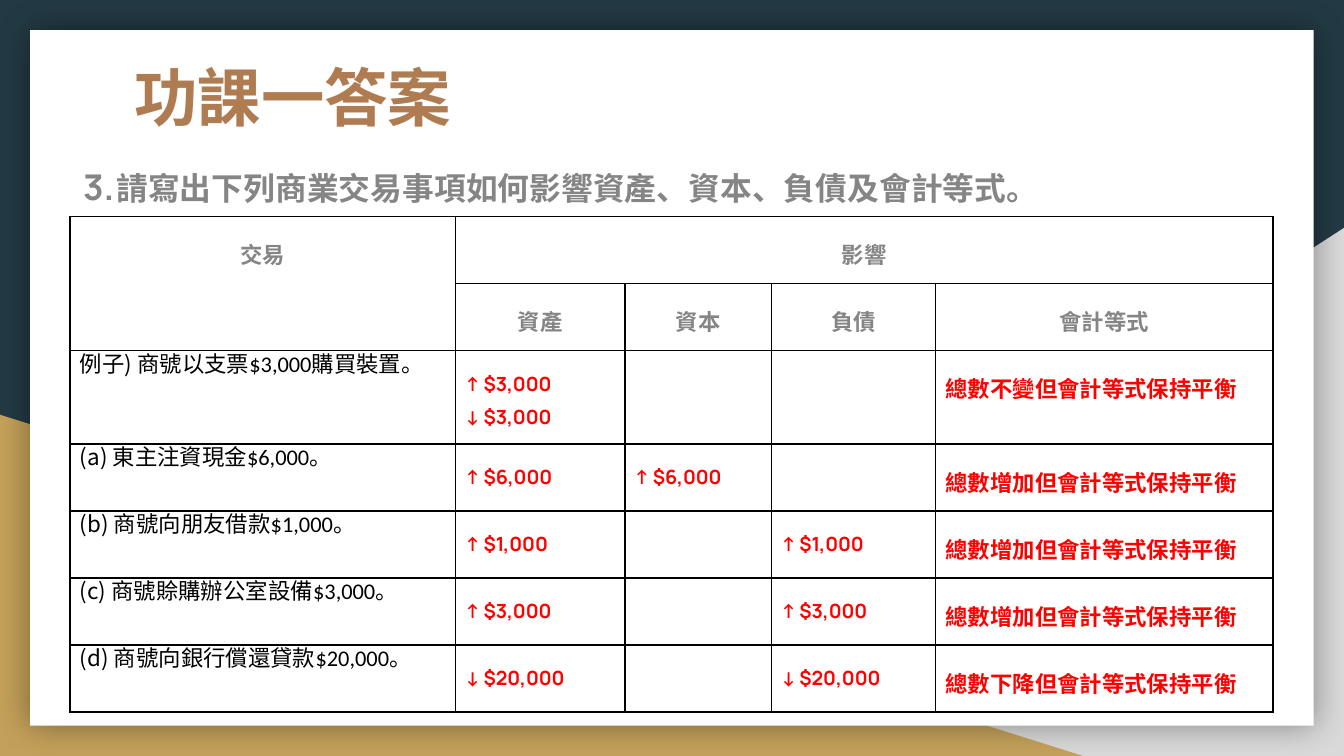
from lxml.etree import SubElement, fromstring
from pptx import Presentation
from pptx.dml.color import RGBColor
from pptx.enum.shapes import MSO_SHAPE
from pptx.enum.text import MSO_ANCHOR, MSO_AUTO_SIZE, PP_ALIGN
from pptx.oxml.ns import nsdecls, qn
from pptx.util import Cm, Pt

CJK = "Noto Sans CJK TC"
HEADING = {"name": "Manrope", "size": Pt(12), "bold": True, "color": "858585"}
ANSWER = {**HEADING, "color": "FF0000"}
AMOUNT = {**ANSWER, "size": Pt(10.5)}
EVENT = {"name": "Calibri", "size": Pt(12), "bold": False, "color": "000000"}
LABEL = {**EVENT, "name": CJK}

COLUMNS = [7.29, 3.2, 2.77, 3.1, 6.38]
ROWS = [1.22, 1.22, 1.73] + [1.22] * 4
EFFECTS = ["資產", "資本", "負債", "會計等式"]
TRANSACTIONS = [
    ([("例子", EVENT), (") ", LABEL), ("商號以支票$3,000購買裝置。", EVENT)],
     ["↑ $3,000", "↓ $3,000"], [], [], "不變"),
    ([("(a) ", LABEL), ("東主注資現金$6,000。", EVENT)],
     ["↑ $6,000"], ["↑ $6,000"], [], "增加"),
    ([("(b) ", LABEL), ("商號向朋友借款$1,000。", EVENT)],
     ["↑ $1,000"], [], ["↑ $1,000"], "增加"),
    ([("(c) ", LABEL), ("商號賒購辦公室設備$3,000。", EVENT)],
     ["↑ $3,000"], [], ["↑ $3,000"], "增加"),
    ([("(d) ", LABEL), ("商號向銀行償還貸款$20,000。", EVENT)],
     ["↓ $20,000"], [], ["↓ $20,000"], "下降"),
]


def rgb(value):
    return RGBColor.from_string(value)


def apply(target, **formats):
    for name, value in formats.items():
        setattr(target, name, value)


def place(shape, box):
    apply(shape, **dict(zip(("left", "top", "width", "height"), map(Cm, box))))


def margins(target, left, top, right, bottom):
    apply(target, margin_left=Cm(left), margin_top=Cm(top),
          margin_right=Cm(right), margin_bottom=Cm(bottom))


def write(paragraph, runs, **formats):
    apply(paragraph, **formats)
    for text, style in runs:
        run = paragraph.add_run()
        run.text = text
        apply(run.font, **{k: v for k, v in style.items() if k != "color"})
        run.font.color.rgb = rgb(style["color"])
        SubElement(run.font._element, qn("a:ea")).set("typeface", CJK)


def add_backdrop(slide, width, height):
    slide.background.fill.solid()
    slide.background.fill.fore_color.rgb = rgb("233A44")
    pieces = [
        (MSO_SHAPE.RIGHT_TRIANGLE, (9.96, height - 9.98, width - 9.96, 9.98), "D9D9D9"),
        (MSO_SHAPE.RIGHT_TRIANGLE, (0, height - 6.45, 20.47, 6.45), "C4A15A"),
        (MSO_SHAPE.RECTANGLE, (0.57, 0.57, width - 1.14, height - 1.14), "FFFFFF"),
    ]
    grey, gold, card = [add_piece(slide, *piece) for piece in pieces]
    grey.element.spPr.xfrm.set("flipH", "1")
    card.element.spPr.find(qn("a:effectLst")).append(fromstring(
        f'<a:outerShdw {nsdecls("a")} blurRad="{Pt(18)}" dist="0" dir="0">'
        '<a:srgbClr val="000000"><a:alpha val="40000"/></a:srgbClr></a:outerShdw>'))


def add_piece(slide, kind, box, color):
    piece = slide.shapes.add_shape(kind, *map(Cm, box))
    piece.shadow.inherit = False
    piece.fill.solid()
    piece.fill.fore_color.rgb = rgb(color)
    piece.line.fill.background()
    return piece


def add_question(slide, box):
    frame = slide.shapes.add_textbox(*map(Cm, box)).text_frame
    apply(frame, word_wrap=True, vertical_anchor=MSO_ANCHOR.MIDDLE)
    margins(frame, 0.25, 0, 0.25, 0.81)
    question = frame.paragraphs[0]
    write(question, [
        ("3.", {**HEADING, "size": Pt(19)}),
        ("\t", HEADING),
        ("請寫出下列商業交易事項如何影響資產、資本、負債及會計等式。",
         {**HEADING, "size": Pt(17)}),
    ], line_spacing=1.25)
    hanging = question._p.get_or_add_pPr()
    hanging.set("marL", str(Cm(0.63)))
    hanging.set("indent", str(-Cm(0.63)))


def add_title(slide, box):
    title = slide.shapes.title
    place(title, box)
    title.element.getparent().append(title.element)
    frame = title.text_frame
    apply(frame, word_wrap=True, auto_size=MSO_AUTO_SIZE.NONE,
          vertical_anchor=MSO_ANCHOR.TOP)
    margins(frame, *[0.25] * 4)
    write(frame.paragraphs[0],
          [("功課一答案", {**HEADING, "size": Pt(34), "color": "AF7B51"})],
          alignment=PP_ALIGN.LEFT)


def frame_cell(cell):
    cell.fill.background()
    properties = cell._tc.get_or_add_tcPr()
    for position, side in enumerate(("lnL", "lnR", "lnT", "lnB")):
        properties.insert(position, fromstring(
            f'<a:{side} {nsdecls("a")} w="{Pt(1)}"><a:solidFill>'
            f'<a:srgbClr val="000000"/></a:solidFill></a:{side}>'))


def fill_cell(cell, lines, padding=0.25, **formats):
    if not lines:
        return
    margins(cell, 0.19, padding, 0.19, padding)
    for number, runs in enumerate(lines):
        frame = cell.text_frame
        paragraph = frame.add_paragraph() if number else frame.paragraphs[0]
        write(paragraph, runs, **{"line_spacing": 1.25, **formats})


def add_answers(slide, box):
    table = slide.shapes.add_table(len(ROWS), len(COLUMNS), *map(Cm, box)).table
    apply(table, first_row=False, horz_banding=False)
    for column, width in zip(table.columns, COLUMNS):
        column.width = Cm(width)
    for row, height in zip(table.rows, ROWS):
        row.height = Cm(height)
    for cell in table.iter_cells():
        frame_cell(cell)
    table.cell(0, 0).merge(table.cell(1, 0))
    table.cell(0, 1).merge(table.cell(0, 4))

    headings = [(0, 0, "交易"), (0, 1, "影響")]
    headings += [(1, i, effect) for i, effect in enumerate(EFFECTS, 1)]
    for row, column, heading in headings:
        fill_cell(table.cell(row, column), [[(heading, HEADING)]],
                  alignment=PP_ALIGN.CENTER)

    for row, (event, *changes, total) in enumerate(TRANSACTIONS, 2):
        fill_cell(table.cell(row, 0), [event], padding=0, line_spacing=Pt(15))
        for column, amounts in enumerate(changes, 1):
            fill_cell(table.cell(row, column), [[(a, AMOUNT)] for a in amounts])
        fill_cell(table.cell(row, 4), [[(f"總數{total}但會計等式保持平衡", ANSWER)]])


def main():
    width, height = 25.4, 14.29
    deck = Presentation()
    apply(deck, slide_width=Cm(width), slide_height=Cm(height))
    slide = deck.slides.add_slide(deck.slide_layouts[5])
    add_backdrop(slide, width, height)
    add_question(slide, (1.32, 3.12, 22.76, 1.4))
    add_title(slide, (2.29, 0.84, 20.85, 2.03))
    add_answers(slide, (1.32, 4.09, sum(COLUMNS), sum(ROWS)))
    deck.save("out.pptx")


if __name__ == "__main__":
    main()
